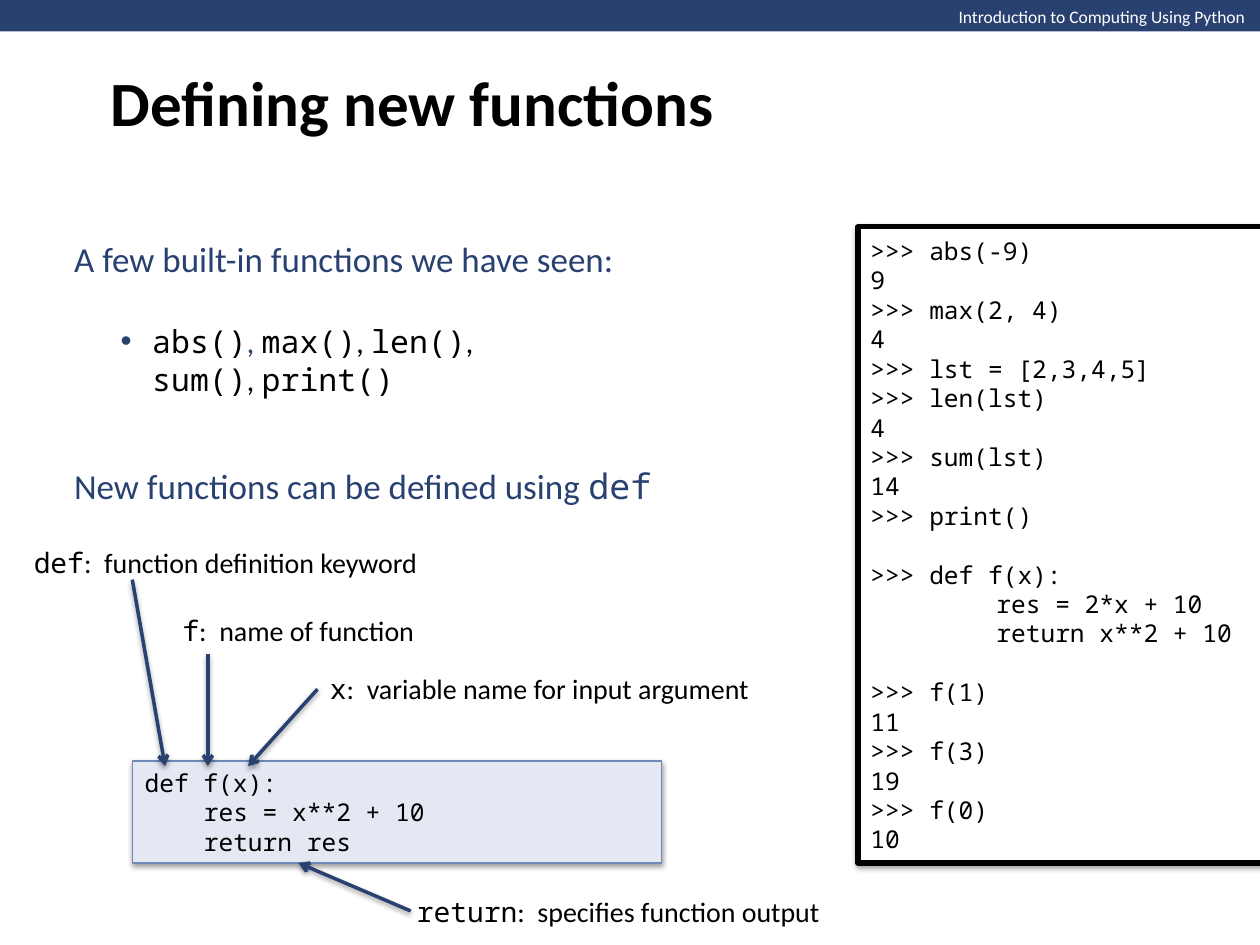
from dataclasses import dataclass

from lxml import etree
from pptx import Presentation
from pptx.dml.color import RGBColor
from pptx.enum.shapes import MSO_CONNECTOR, MSO_SHAPE
from pptx.enum.text import MSO_ANCHOR, MSO_AUTO_SIZE, PP_ALIGN
from pptx.oxml.ns import qn
from pptx.util import Inches, Pt

RECT = MSO_SHAPE.RECTANGLE
LINE = MSO_CONNECTOR.STRAIGHT
TOP, MIDDLE = MSO_ANCHOR.TOP, MSO_ANCHOR.MIDDLE
GROW = MSO_AUTO_SIZE.SHAPE_TO_FIT_TEXT
LEFT = PP_ALIGN.LEFT


@dataclass(frozen=True)
class Theme:
    sans: str = "Calibri"
    mono: str = "Noto Sans Mono"
    navy: str = "294171"
    black: str = "000000"
    white: str = "FFFFFF"
    pale: str = "E3E8F2"
    edge: str = "7088BA"
    tiny: int = 10
    code: int = 14
    label: int = 16
    item: int = 18
    body: int = 20
    title: int = 36


T = Theme()


def apply(target, values):
    for name, value in values.items():
        setattr(target, name, value)


def rgb(code):
    return RGBColor.from_string(code)


def sans(text, color=T.black):
    return text, T.sans, color


def mono(text, color=T.black):
    return text, T.mono, color


def para(*runs, size, before=0, indent=0, bold=False, bullet=False):
    return {"runs": runs, "size": size, "before": before,
            "indent": indent, "bold": bold, "bullet": bullet}


def indent_text(p, item):
    """Set the left margin, and hang a bullet in it if the item has one."""
    props = p._p.get_or_add_pPr()
    props.set("marL", str(Inches(item["indent"])))
    props.set("indent", str(Inches(-0.25 if item["bullet"] else 0)))
    if item["bullet"]:
        color = etree.SubElement(props, qn("a:buClr"))
        etree.SubElement(color, qn("a:srgbClr"), val=T.navy)
        etree.SubElement(props, qn("a:buFont"), typeface="Arial")
        etree.SubElement(props, qn("a:buChar"), char="•")


def write(shape, items, wrap=True, anchor=MIDDLE, fit=GROW):
    frame = shape.text_frame
    apply(frame, {"word_wrap": wrap, "vertical_anchor": anchor,
                  "auto_size": fit})
    for i, item in enumerate(items):
        p = frame.add_paragraph() if i else frame.paragraphs[0]
        apply(p, {"alignment": LEFT, "space_before": Pt(item["before"])})
        indent_text(p, item)
        for text, face, color in item["runs"]:
            run = p.add_run()
            run.text = text
            apply(run.font, {"name": face, "size": Pt(item["size"]),
                             "bold": item["bold"]})
            run.font.color.rgb = rgb(color)


def add_text(slide, box, *items, **layout):
    write(slide.shapes.add_textbox(*map(Inches, box)), items, **layout)


def cast_shadow(shape):
    effects = etree.SubElement(shape._element.spPr, qn("a:effectLst"))
    shadow = etree.SubElement(
        effects, qn("a:outerShdw"), blurRad=str(Pt(3.1)), dist=str(Pt(1.6)),
        dir="5400000", rotWithShape="0")
    color = etree.SubElement(shadow, qn("a:srgbClr"), val=T.black)
    etree.SubElement(color, qn("a:alpha"), val="38000")


def stroke(shape, color, width):
    shape.line.color.rgb = rgb(color)
    shape.line.width = Pt(width)


def add_rect(slide, box, fill):
    shape = slide.shapes.add_shape(RECT, *map(Inches, box))
    shape.fill.solid()
    shape.fill.fore_color.rgb = rgb(fill)
    return shape


def add_bar(slide, box):
    bar = add_rect(slide, box, T.navy)
    bar.line.fill.background()
    bar.shadow.inherit = False


def add_code(slide, box, fill, edge, width, items):
    panel = add_rect(slide, box, fill)
    stroke(panel, edge, width)
    cast_shadow(panel)
    write(panel, items)


def add_arrow(slide, *ends):
    arrow = slide.shapes.add_connector(LINE, *map(Inches, ends))
    stroke(arrow, T.navy, 2)
    etree.SubElement(arrow.line._get_or_add_ln(), qn("a:tailEnd"),
                     type="arrow")
    cast_shadow(arrow)


def code_lines(source, indent):
    """Turn code into paragraphs: a tab indents, an empty line adds a gap."""
    items, gap = [], 0
    for line in source.split("\n"):
        if not line:
            gap = 16.8
            continue
        items.append(para(mono(line.lstrip("\t")), size=T.code, before=gap,
                          indent=indent if line[0] == "\t" else 0))
        gap = 0
    return items


SAMPLE = "def f(x):\n\tres = x**2 + 10\n\treturn res"
SESSION = """>>> abs(-9)
9
>>> max(2, 4)
4
>>> lst = [2,3,4,5]
>>> len(lst)
4
>>> sum(lst)
14
>>> print()

>>> def f(x):
\tres = 2*x + 10
\treturn x**2 + 10

>>> f(1)
11
>>> f(3)
19
>>> f(0)
10"""

# word, meaning, text box, wrap, arrow ends
LABELS = [
    ("def", "function definition keyword", (0.17, 4.28, 3.3, 0.37), False,
     (1.05, 4.6, 1.31, 6.08)),
    ("f", "name of function", (1.35, 4.82, 2.06, 0.37), False,
     (1.65, 5.19, 1.65, 6.08)),
    ("x", "variable name for input argument", (2.52, 5.28, 3.65, 0.37), True,
     (2.52, 5.47, 1.97, 6.08)),
    ("return", "specifies function output", (3.21, 7.05, 3.65, 0.37), True,
     (3.26, 7.23, 2.37, 6.85)),
]


def main():
    deck = Presentation()
    apply(deck, {"slide_width": Inches(10), "slide_height": Inches(7.5)})
    slide = deck.slides.add_slide(deck.slide_layouts[6])

    add_bar(slide, (0, 0, 10.01, 0.25))
    add_text(slide, (7.51, 0, 2.5, 0.27),
             para(sans("Introduction to Computing Using Python", T.white),
                  size=T.tiny), wrap=False, anchor=TOP)
    add_text(slide, (0.78, 0, 8.5, 1.61),
             para(sans("Defining new functions"), size=T.title, bold=True),
             fit=MSO_AUTO_SIZE.NONE)
    add_text(slide, (0.49, 1.83, 4.54, 1.38),
             para(sans("A few built-in functions we have seen:", T.navy),
                  size=T.body),
             para(mono("abs()"), sans(", ", T.navy), mono("max()"),
                  sans(", "), mono("len()"), sans(","),
                  size=T.item, before=24, indent=0.62, bullet=True),
             para(mono("sum()"), sans(", "), mono("print()"),
                  size=T.item, indent=0.62), wrap=False)
    add_text(slide, (0.49, 3.63, 4.83, 0.44),
             para(sans("New functions can be defined using ", T.navy),
                  mono("def", T.navy), size=T.body), wrap=False)

    add_code(slide, (1.05, 6.04, 4.2, 0.81), T.pale, T.edge, 0.75,
             code_lines(SAMPLE, 0.47))
    for word, meaning, box, wrap, ends in LABELS:
        add_arrow(slide, *ends)
        add_text(slide, box, para(mono(word), sans(f":  {meaning}"),
                                  size=T.label), wrap=wrap)
    add_code(slide, (6.81, 1.8, 3.21, 5.05), T.white, T.black, 3,
             code_lines(SESSION, 1))
    deck.save("out.pptx")


if __name__ == "__main__":
    main()
